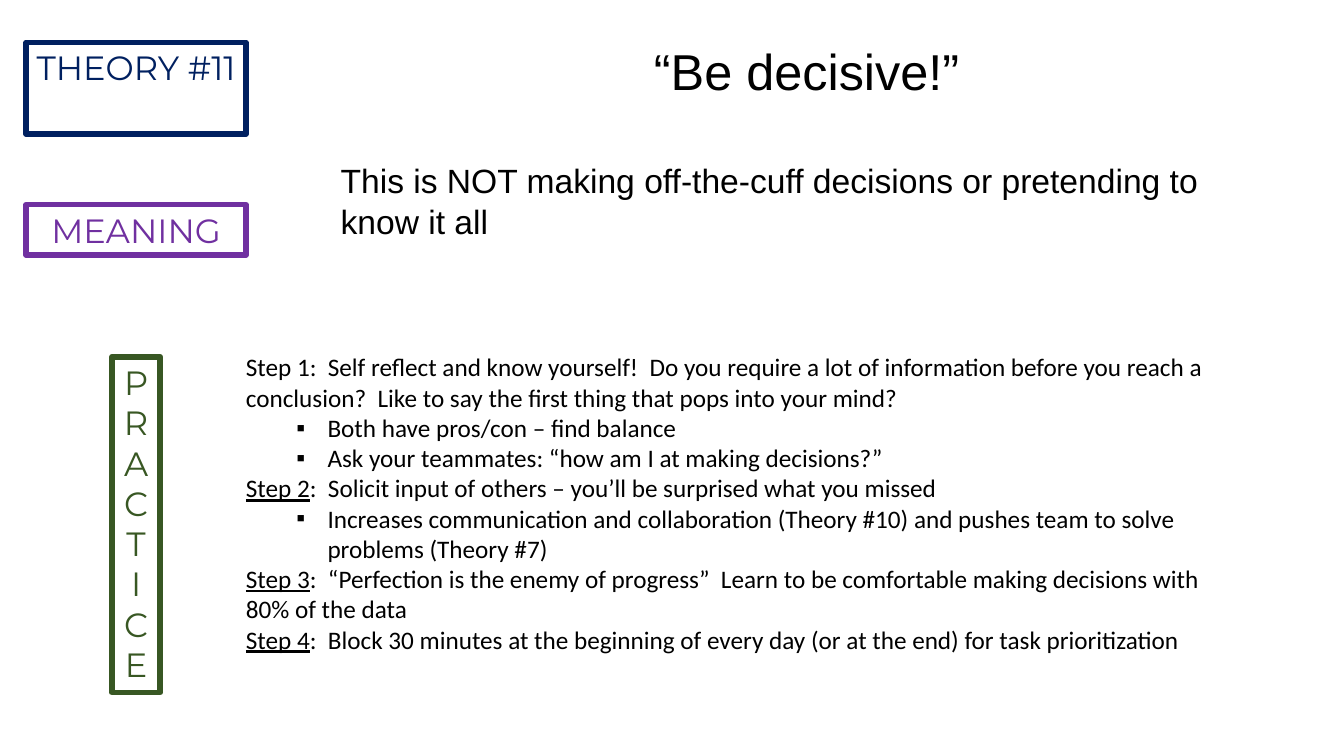
import pptx
import pptx.dml.color
import pptx.enum.shapes
import pptx.enum.text
import pptx.oxml.ns
import pptx.util
from lxml import etree

Inches, Pt = pptx.util.Inches, pptx.util.Pt
ALIGN = pptx.enum.text.PP_ALIGN

THEME = {
    "navy": "002060", "purple": "7030A0", "green": "385723", "black": "000000",
    "label_font": "Montserrat", "head_font": "Arial", "body_font": "Calibri",
    "title": 36, "large": 24, "body": 18, "border": 4,
}

# text, colour, (left, top, width, height)
LABELS = [
    ("THEORY #11", "navy", (0.26, 0.42, 2.18, 0.91)),
    ("MEANING", "purple", (0.26, 2.03, 2.18, 0.5)),
    ("PRACTICE", "green", (1.11, 3.54, 0.48, 3.33)),
]
TITLE = "“Be decisive!” "
TITLE_BOX = (3.47, 0.35, 9.2, 0.71)
MEANING = "This is NOT making off-the-cuff decisions or pretending to know it all"
MEANING_BOX = (3.28, 1.54, 9.2, 0.91)

# underlined lead, text, bullets below it
STEPS = [
    ("", "Step 1:  Self reflect and know yourself!  Do you require a lot of information "
     "before you reach a conclusion?  Like to say the first thing that pops into your mind?",
     ["Both have pros/con – find balance",
      "Ask your teammates: “how am I at making decisions?”"]),
    ("Step 2", ":  Solicit input of others – you’ll be surprised what you missed",
     ["Increases communication and collaboration (Theory #10) and pushes team to solve "
      "problems (Theory #7)"]),
    ("Step 3", ":  “Perfection is the enemy of progress”  Learn to be comfortable making "
     "decisions with 80% of the data", []),
    ("Step 4", ":  Block 30 minutes at the beginning of every day (or at the end) for task "
     "prioritization", []),
]
STEPS_BOX = (2.34, 3.44, 10.12, 3.43)
BULLET, BULLET_LEFT, BULLET_HANG = "▪", 0.81, 0.31


def rgb(name):
    return pptx.dml.color.RGBColor.from_string(THEME[name])


def add_text(p, text, font="body_font", size="body", color="black", align=ALIGN.LEFT,
             underline=False):
    p.alignment = align
    r = p.add_run()
    r.text = text
    r.font.name = THEME[font]
    r.font.size = Pt(THEME[size])
    r.font.color.rgb = rgb(color)
    if underline:
        r.font.underline = True


def set_bullet(p):
    p.level = 1
    pPr = p._p.get_or_add_pPr()
    pPr.set("marL", str(Inches(BULLET_LEFT)))
    pPr.set("indent", str(-Inches(BULLET_HANG)))
    etree.SubElement(pPr, pptx.oxml.ns.qn("a:buFont")).set("typeface", THEME["head_font"])
    etree.SubElement(pPr, pptx.oxml.ns.qn("a:buChar")).set("char", BULLET)


def add_label(s, text, color, box):
    sp = s.shapes.add_shape(pptx.enum.shapes.MSO_SHAPE.RECTANGLE, *map(Inches, box))
    sp.shadow.inherit = False
    sp.fill.background()
    sp.line.color.rgb = rgb(color)
    sp.line.width = Pt(THEME["border"])
    tf = sp.text_frame
    tf.word_wrap = True
    tf.vertical_anchor = pptx.enum.text.MSO_ANCHOR.TOP
    add_text(tf.paragraphs[0], text, font="label_font", size="large", color=color,
             align=ALIGN.CENTER)


def add_box(s, box):
    tf = s.shapes.add_textbox(*map(Inches, box)).text_frame
    tf.word_wrap = True
    return tf


def add_steps(s):
    tf = add_box(s, STEPS_BOX)
    for i, (lead, text, bullets) in enumerate(STEPS):
        p = tf.add_paragraph() if i else tf.paragraphs[0]
        if lead:
            add_text(p, lead, underline=True)
        add_text(p, text)
        for bullet in bullets:
            p = tf.add_paragraph()
            add_text(p, bullet)
            set_bullet(p)


def main():
    prs = pptx.Presentation()
    prs.slide_width, prs.slide_height = Inches(13.33), Inches(7.5)
    s = prs.slides.add_slide(prs.slide_layouts[6])
    for text, color, box in LABELS:
        add_label(s, text, color, box)
    add_text(add_box(s, TITLE_BOX).paragraphs[0], TITLE, font="head_font", size="title",
             align=ALIGN.CENTER)
    add_text(add_box(s, MEANING_BOX).paragraphs[0], MEANING, font="head_font", size="large")
    add_steps(s)
    prs.save("out.pptx")


if __name__ == "__main__":
    main()
